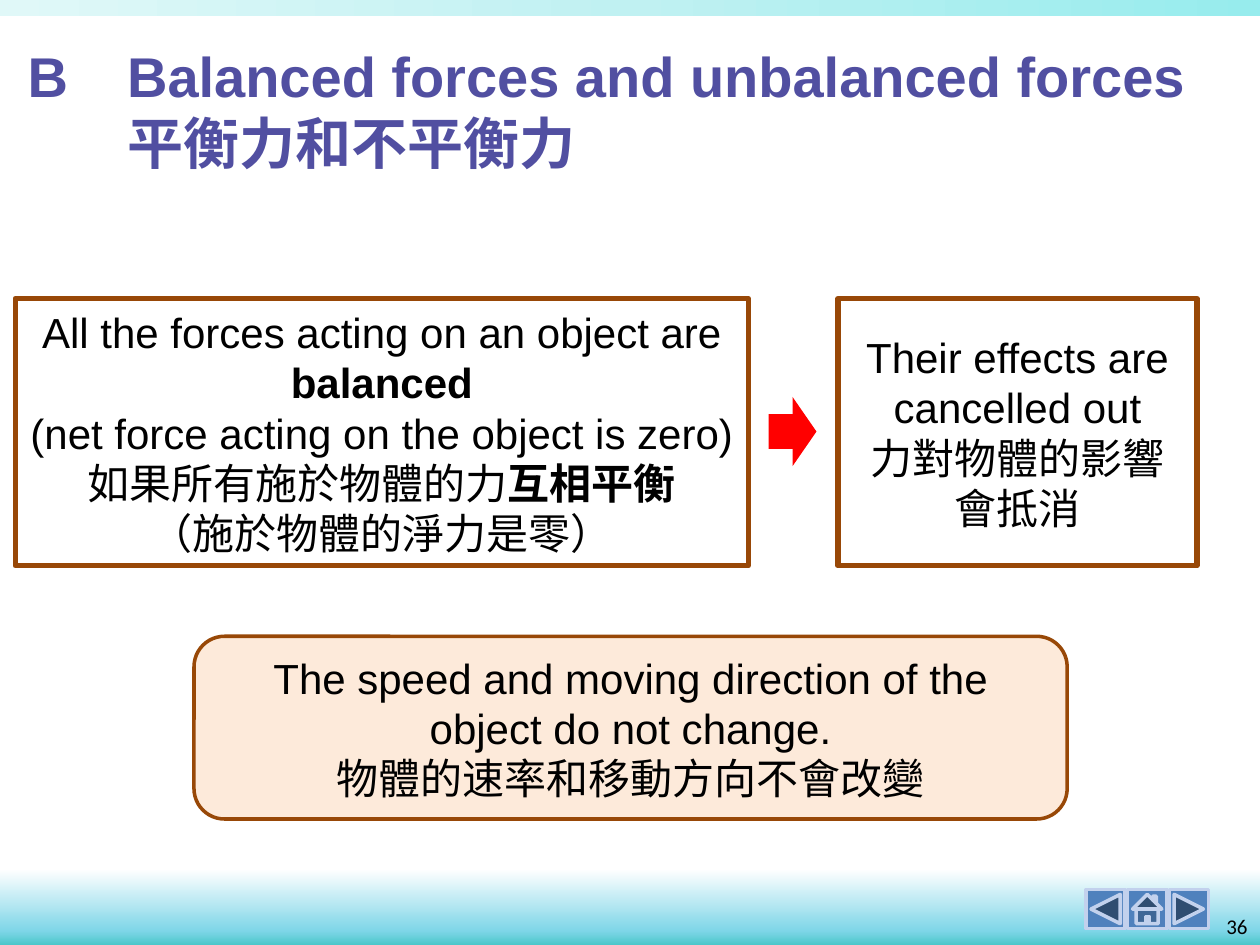
from lxml import etree
from pptx import Presentation
from pptx.dml.color import RGBColor
from pptx.enum.shapes import MSO_SHAPE
from pptx.enum.text import MSO_ANCHOR, PP_ALIGN
from pptx.oxml.ns import qn
from pptx.util import Inches, Pt

RECT = MSO_SHAPE.RECTANGLE
ROUNDED = MSO_SHAPE.ROUNDED_RECTANGLE
RIGHT_ARROW = MSO_SHAPE.RIGHT_ARROW
NAV_BUTTONS = (MSO_SHAPE.ACTION_BUTTON_BACK_OR_PREVIOUS,
               MSO_SHAPE.ACTION_BUTTON_HOME,
               MSO_SHAPE.ACTION_BUTTON_FORWARD_OR_NEXT)
LEFT, CENTER, RIGHT = PP_ALIGN.LEFT, PP_ALIGN.CENTER, PP_ALIGN.RIGHT
MIDDLE = MSO_ANCHOR.MIDDLE

CJK = "Noto Sans CJK SC"
COLORS = {
    "text": "000000",
    "title": "514FA1",
    "brown": "984807",
    "peach": "FDEADA",
    "red": "FF0000",
    "button": "4F81BD",
    "button_edge": "C2D1ED",
}
FOOTER_STOPS = ((0, "4CC7CA"), (19, "7FD6E8"), (100, "FFFFFF"))
HEADER_STOPS = ((0, "97ECED"), (50, "C0F1F2"), (100, "E0F8F8"))


def rgb(name):
    return RGBColor.from_string(COLORS[name])


def add_block(slide, kind, box, fill=None, edge=None, edge_width=2):
    block = slide.shapes.add_shape(kind, *map(Inches, box))
    block.shadow.inherit = False
    if fill:
        block.fill.solid()
        block.fill.fore_color.rgb = rgb(fill)
    else:
        block.fill.background()
    if edge:
        block.line.color.rgb = rgb(edge)
        block.line.width = Pt(edge_width)
    else:
        block.line.fill.background()
    return block


def add_band(slide, box, stops, angle):
    """Add a strip with a linear gradient; angle is clockwise in degrees."""
    band = add_block(slide, RECT, box)
    no_fill = band._element.spPr.find(qn("a:noFill"))
    gradient = etree.Element(qn("a:gradFill"), rotWithShape="1")
    stop_list = etree.SubElement(gradient, qn("a:gsLst"))
    for position, color in stops:
        stop = etree.SubElement(stop_list, qn("a:gs"), pos=str(position * 1000))
        etree.SubElement(stop, qn("a:srgbClr"), val=color)
    etree.SubElement(gradient, qn("a:lin"), ang=str(angle * 60000), scaled="0")
    no_fill.getparent().replace(no_fill, gradient)
    return band


def add_run(paragraph, text, size, color="text", bold=False, font="Arial"):
    run = paragraph.add_run()
    run.text = text
    run.font.size = Pt(size)
    run.font.bold = bold
    run.font.name = font
    run.font.color.rgb = rgb(color)
    latin = run._r.rPr.find(qn("a:latin"))
    latin.addnext(etree.Element(qn("a:ea"), typeface=CJK))


def write_statement(block, paragraphs):
    """Fill a block with centred paragraphs of lines, each line (text, bold) runs."""
    frame = block.text_frame
    frame.word_wrap = True
    frame.vertical_anchor = MIDDLE
    for number, lines in enumerate(paragraphs):
        paragraph = frame.add_paragraph() if number else frame.paragraphs[0]
        paragraph.alignment = CENTER
        for line_number, line in enumerate(lines):
            if line_number:
                paragraph.add_line_break()
            for text, bold in line:
                add_run(paragraph, text, 24, bold=bold)


def add_text_box(slide, box, alignment):
    frame = slide.shapes.add_textbox(*map(Inches, box)).text_frame
    frame.word_wrap = True
    paragraph = frame.paragraphs[0]
    paragraph.alignment = alignment
    return paragraph


def add_title(slide):
    heading = add_text_box(slide, (0.12, 0.28, 9.69, 1.18), LEFT)
    properties = heading._p.get_or_add_pPr()
    properties.set("marL", str(Inches(0.79)))
    properties.set("indent", str(-Inches(0.79)))
    tabs = etree.SubElement(properties, qn("a:tabLst"))
    etree.SubElement(tabs, qn("a:tab"), pos=str(Inches(0.78)), algn="l")
    add_run(heading, "B\tBalanced forces and unbalanced forces", 32, "title", True)
    heading.add_line_break()
    add_run(heading, "平衡力和不平衡力", 32, "title", True, CJK)


def add_frame(slide):
    """Add the bands, navigation buttons and page number."""
    footer = add_band(slide, (0, 6.9, 10, 0.6), FOOTER_STOPS, 90)
    footer.rotation = 180
    for column, kind in enumerate(NAV_BUTTONS):
        add_block(slide, kind, (8.62 + 0.33 * column, 7.06, 0.31, 0.31),
                  "button", "button_edge")
    add_band(slide, (0, 0, 10, 0.13), HEADER_STOPS, 180)
    page = add_text_box(slide, (9.5, 7.2, 0.5, 0.3), RIGHT)
    add_run(page, "36", 12, font="Calibri")


def add_reasoning(slide):
    cause = add_block(slide, RECT, (0.12, 2.37, 5.82, 2.12), None, "brown", 3)
    write_statement(cause, [
        [[("All the forces acting on an object are ", False), ("balanced", True)]],
        [[("(net force acting on the object is zero)", False)],
         [("如果所有施於物體的力", False), ("互相平衡", True)]],
        [[("（施於物體的淨力是零）", False)]],
    ])
    effect = add_block(slide, RECT, (6.65, 2.37, 2.85, 2.12), None, "brown", 3)
    write_statement(effect, [
        [[("Their effects are cancelled out", False)],
         [("力對物體的影響會抵消", False)]],
    ])
    add_block(slide, RIGHT_ARROW, (6.1, 3.15, 0.38, 0.55), "red")
    conclusion = add_block(slide, ROUNDED, (1.54, 5.05, 6.93, 1.45), "peach", "brown")
    write_statement(conclusion, [
        [[("The speed and moving direction of the object do not change.", False)],
         [("物體的速率和移動方向不會改變", False)]],
    ])


def main():
    deck = Presentation()
    deck.slide_width, deck.slide_height = Inches(10), Inches(7.5)
    slide = deck.slides.add_slide(deck.slide_layouts[6])
    add_frame(slide)
    add_reasoning(slide)
    add_title(slide)
    deck.save("out.pptx")


if __name__ == "__main__":
    main()
